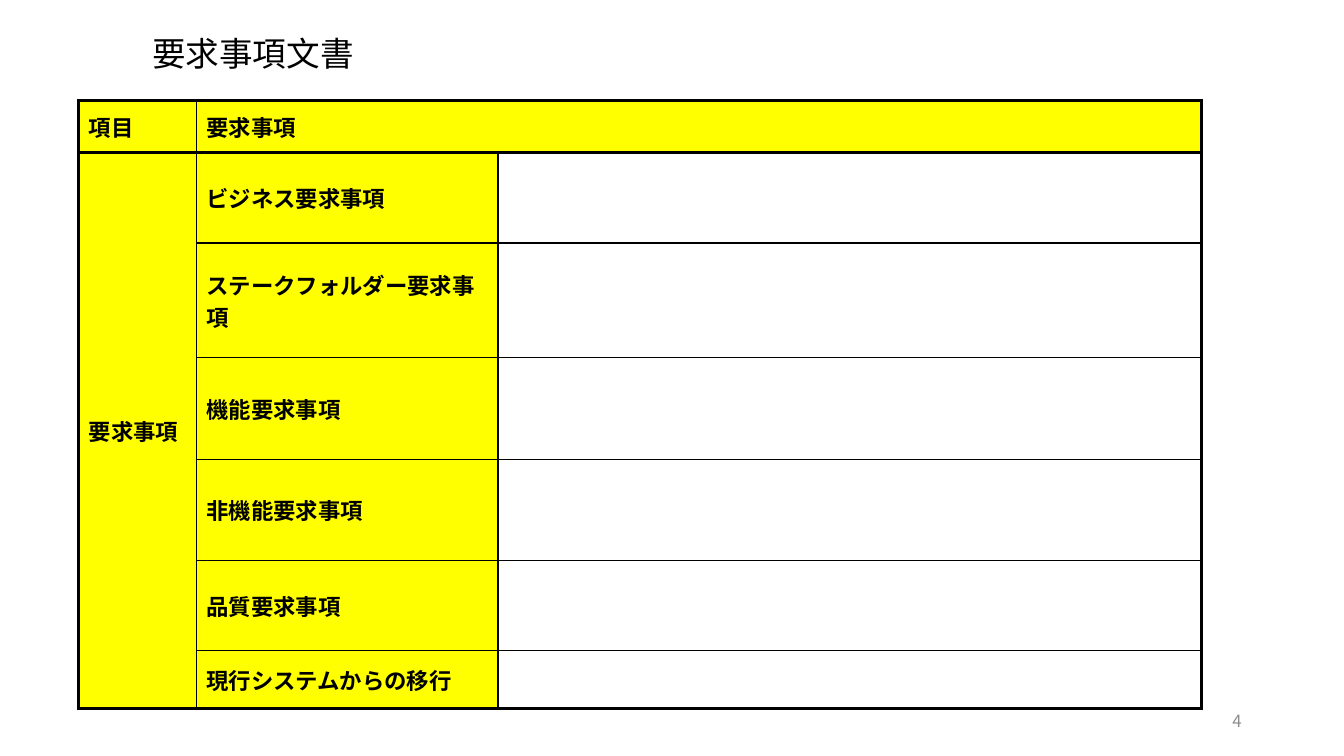
from dataclasses import dataclass

from lxml import etree
from pptx import Presentation
from pptx.dml.color import RGBColor
from pptx.enum.text import MSO_ANCHOR, MSO_AUTO_SIZE, PP_ALIGN
from pptx.oxml.ns import qn
from pptx.util import Pt

MIDDLE = MSO_ANCHOR.MIDDLE
TOP = MSO_ANCHOR.TOP
LEFT = PP_ALIGN.LEFT
RIGHT = PP_ALIGN.RIGHT
NO_AUTOFIT = MSO_AUTO_SIZE.NONE
TITLE_ONLY = 5
PLAIN_TABLE_STYLE = "{2D5ABB26-0587-4C30-8999-92F81FD0307C}"


@dataclass(frozen=True)
class Theme:
    """Colours, fonts, type sizes and line widths of the slide."""

    ink: str = "000000"
    label_fill: str = "FFFF00"
    muted: str = "8C8C8C"
    latin: str = "Times New Roman"
    japanese: str = "Noto Sans CJK JP"
    title_size: float = 24
    label_size: float = 16
    number_size: float = 12
    thick: float = 2.25
    thin: float = 1


THEME = Theme()
COLUMN_WIDTHS = [84.2, 215.3, 502.3]
ROW_HEIGHTS = [36.8, 64.8, 82, 72.7, 72.1, 64.2, 41.8]
REQUIREMENTS = [
    "ビジネス要求事項",
    "ステークフォルダー要求事項",
    "機能要求事項",
    "非機能要求事項",
    "品質要求事項",
    "現行システムからの移行",
]


def write_text(frame, text, *, size, color=THEME.ink, font=THEME.latin,
               bold=False, align=LEFT, space_before=0):
    """Write one formatted paragraph into a text frame."""
    paragraph = frame.paragraphs[0]
    paragraph.alignment = align
    paragraph.space_before = Pt(space_before)
    run = paragraph.add_run()
    run.text = text
    run.font.size = Pt(size)
    run.font.bold = bold
    run.font.name = font
    run.font.color.rgb = RGBColor.from_string(color)
    east_asian = etree.Element(qn("a:ea"), typeface=THEME.japanese)
    run.font._element.find(qn("a:latin")).addnext(east_asian)


def set_borders(cell, widths):
    """Draw the left, right, top and bottom borders of a cell."""
    properties = cell._tc.get_or_add_tcPr()
    for index, (side, width) in enumerate(zip("LRTB", widths)):
        line = etree.Element(qn(f"a:ln{side}"), w=str(Pt(width)))
        fill = etree.SubElement(line, qn("a:solidFill"))
        etree.SubElement(fill, qn("a:srgbClr"), val=THEME.ink)
        properties.insert(index, line)


def border_widths(cell, row, column):
    """Return thick widths on the outer frame and below the header, else thin."""
    last_row = row + (cell.span_height if cell.is_merge_origin else 1)
    last_column = column + (cell.span_width if cell.is_merge_origin else 1)
    thick_sides = [
        column == 0,
        last_column == len(COLUMN_WIDTHS),
        row in (0, 1),
        last_row in (1, len(ROW_HEIGHTS)),
    ]
    return [THEME.thick if side else THEME.thin for side in thick_sides]


def add_title(slide, text, left, top, width, height):
    """Place the slide title in the given box."""
    title = slide.shapes.title
    title.left, title.top, title.width, title.height = map(Pt, (left, top, width, height))
    frame = title.text_frame
    frame.auto_size = NO_AUTOFIT
    frame.word_wrap = False
    frame.vertical_anchor = TOP
    write_text(frame, text, size=THEME.title_size)


def add_requirements_table(slide, left, top):
    """Build the requirements table from its top left corner."""
    shape = slide.shapes.add_table(
        len(ROW_HEIGHTS), len(COLUMN_WIDTHS), Pt(left), Pt(top),
        Pt(sum(COLUMN_WIDTHS)), Pt(sum(ROW_HEIGHTS)))
    table = shape.table
    table.first_row = table.horz_banding = False
    table._tbl.tblPr.find(qn("a:tableStyleId")).text = PLAIN_TABLE_STYLE
    for column, width in zip(table.columns, COLUMN_WIDTHS):
        column.width = Pt(width)
    for row, height in zip(table.rows, ROW_HEIGHTS):
        row.height = Pt(height)
    table.cell(0, 1).merge(table.cell(0, 2))
    table.cell(1, 0).merge(table.cell(len(REQUIREMENTS), 0))

    labels = {(0, 0): "項目", (0, 1): "要求事項", (1, 0): "要求事項"}
    labels.update({(row, 1): text for row, text in enumerate(REQUIREMENTS, 1)})
    for row in range(len(ROW_HEIGHTS)):
        for column in range(len(COLUMN_WIDTHS)):
            cell = table.cell(row, column)
            if cell.is_spanned:
                continue
            cell.vertical_anchor = MIDDLE
            if (row, column) in labels:
                cell.fill.solid()
                cell.fill.fore_color.rgb = RGBColor.from_string(THEME.label_fill)
                write_text(cell.text_frame, labels[row, column],
                           size=THEME.label_size, bold=True, space_before=3.2)
            else:
                cell.fill.background()
            set_borders(cell, border_widths(cell, row, column))


def add_page_number(slide, text, left, top, width, height):
    """Place the page number at the right of the given box."""
    box = slide.shapes.add_textbox(*map(Pt, (left, top, width, height)))
    frame = box.text_frame
    frame.word_wrap = True
    frame.vertical_anchor = MIDDLE
    write_text(frame, text, size=THEME.number_size, color=THEME.muted,
               font=THEME.japanese, align=RIGHT)


def main():
    """Build the requirements slide and save it."""
    presentation = Presentation()
    presentation.slide_width = Pt(960)
    presentation.slide_height = Pt(540)
    slide = presentation.slides.add_slide(presentation.slide_layouts[TITLE_ONLY])
    add_title(slide, "要求事項文書", 101.5, 20.2, 160, 36)
    add_requirements_table(slide, 56.2, 72)
    add_page_number(slide, "4", 678, 500.4, 216, 28.8)
    presentation.save("out.pptx")


if __name__ == "__main__":
    main()
